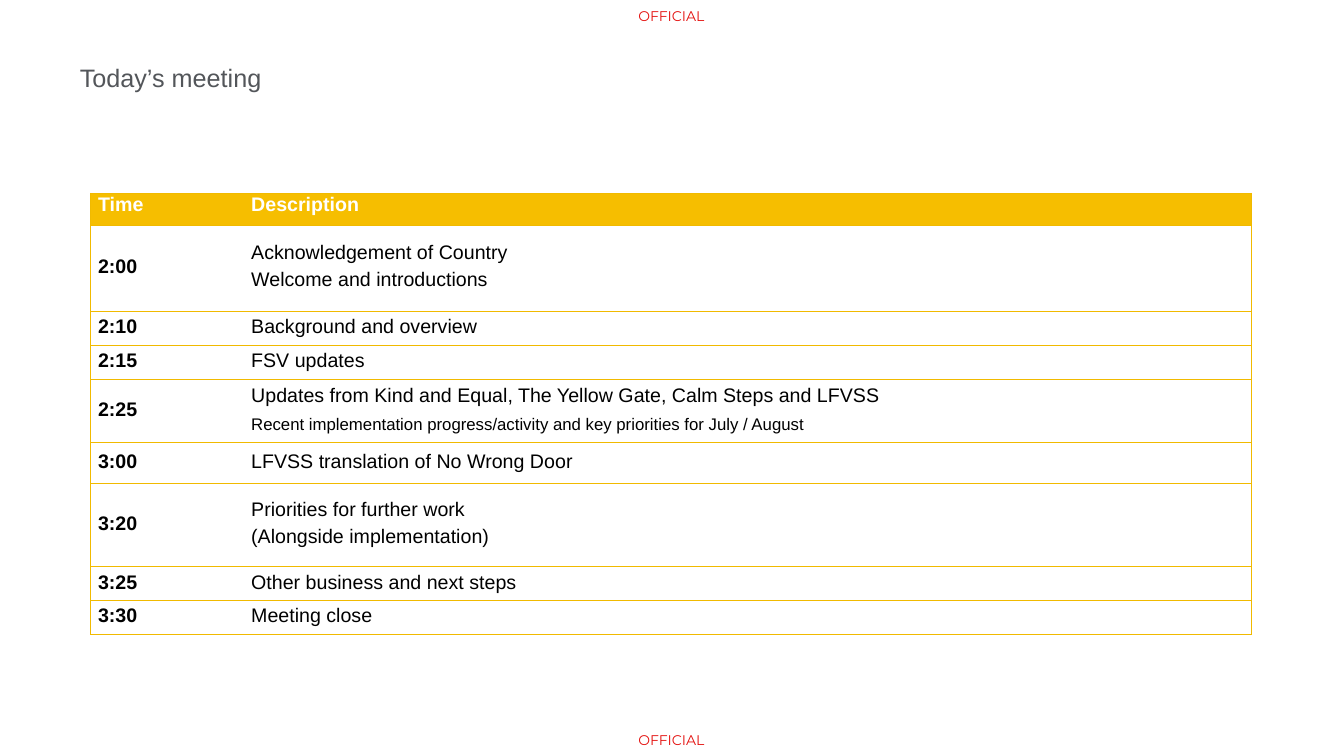
from dataclasses import dataclass

import lxml.etree
import pptx
import pptx.dml.color
import pptx.enum.text
import pptx.oxml.ns
import pptx.util

Cm = pptx.util.Cm
Pt = pptx.util.Pt
Anchor = pptx.enum.text.MSO_ANCHOR
Align = pptx.enum.text.PP_ALIGN


@dataclass(frozen=True)
class Theme:
    gold: str = "F1BA00"
    header: str = "F6BE00"
    white: str = "FFFFFF"
    black: str = "000000"
    title: str = "53565A"
    marking: str = "E4100E"
    body_font: str = "Arial"
    marking_font: str = "Montserrat"
    title_size: float = 18
    table_size: float = 14
    note_size: float = 12
    marking_size: float = 10
    border_width: float = 0.75


@dataclass(frozen=True)
class AgendaItem:
    time: str
    topic: str
    height: float
    second_line: str = ""
    second_size: float = 14


THEME = Theme()
NO_GRID_STYLE = "{2D5ABB26-0587-4C30-8999-92F81FD0307C}"
COLUMN_WIDTHS = (3.86, 25.4)
HEADER_HEIGHT = 0.8
AGENDA = (
    AgendaItem("2:00", "Acknowledgement of Country", 2.17, "Welcome and introductions"),
    AgendaItem("2:10", "Background and overview", 0.86),
    AgendaItem("2:15", "FSV updates", 0.86),
    AgendaItem("2:25", "Updates from Kind and Equal, The Yellow Gate, Calm Steps and LFVSS", 1.59,
               "Recent implementation progress/activity and key priorities for July / August",
               THEME.note_size),
    AgendaItem("3:00", "LFVSS translation of No Wrong Door", 1.03),
    AgendaItem("3:20", "Priorities for further work", 2.1, "(Alongside implementation)"),
    AgendaItem("3:25", "Other business and next steps", 0.86),
    AgendaItem("3:30", "Meeting close", 0.85),
)


def apply(target, values: dict) -> None:
    for name, value in values.items():
        setattr(target, name, value)


def write(para, text: str, size: float, color: str, font: str = THEME.body_font,
          bold: bool = False) -> None:
    span = para.add_run()
    span.text = text
    apply(span.font, {"name": font, "size": Pt(size), "bold": bold})
    span.font.color.rgb = pptx.dml.color.RGBColor.from_string(color)


def format_frame(frame) -> None:
    apply(frame, {"margin_left": 0, "margin_right": 0, "margin_top": 0, "margin_bottom": 0,
                  "word_wrap": True, "vertical_anchor": Anchor.MIDDLE,
                  "auto_size": pptx.enum.text.MSO_AUTO_SIZE.NONE})


def add_marking(page, top: float) -> None:
    box = page.shapes.add_textbox(Cm(15.62), Cm(top), Cm(2.6), Cm(0.8))
    format_frame(box.text_frame)
    para = box.text_frame.paragraphs[0]
    para.alignment = Align.CENTER
    write(para, "OFFICIAL", THEME.marking_size, THEME.marking, THEME.marking_font)


def add_title(page) -> None:
    box = page.shapes.title
    apply(box, {"left": Cm(2.01), "top": Cm(0.76), "width": Cm(29.87), "height": Cm(2.39)})
    format_frame(box.text_frame)
    para = box.text_frame.paragraphs[0]
    para.alignment = Align.LEFT
    write(para, "Today’s meeting", THEME.title_size, THEME.title)


def add_borders(cell, sides: str) -> None:
    properties = cell._tc.get_or_add_tcPr()
    qn = pptx.oxml.ns.qn
    for side in sides:
        line = lxml.etree.SubElement(properties, qn(f"a:ln{side}"),
                                     w=str(Pt(THEME.border_width)))
        fill = lxml.etree.SubElement(line, qn("a:solidFill"))
        lxml.etree.SubElement(fill, qn("a:srgbClr"), val=THEME.gold)


def format_cell(cell, column: int, fill: str, anchor) -> None:
    apply(cell, {"margin_left": Cm(0.19), "margin_right": Cm(0.19), "margin_top": 0,
                 "margin_bottom": 0, "vertical_anchor": anchor})
    add_borders(cell, ("L" if column == 0 else "R") + "TB")
    cell.fill.solid()
    cell.fill.fore_color.rgb = pptx.dml.color.RGBColor.from_string(fill)


def fill_header(table) -> None:
    for column, label in enumerate(("Time", "Description")):
        cell = table.cell(0, column)
        format_cell(cell, column, THEME.header, Anchor.TOP)
        para = cell.text_frame.paragraphs[0]
        para.space_after = Pt(3)
        write(para, label, THEME.table_size, THEME.white, bold=True)


def fill_item(table, row: int, item: AgendaItem) -> None:
    topic_lines = [(item.topic, THEME.table_size)]
    if item.second_line:
        topic_lines.append((item.second_line, item.second_size))
    for column, lines in enumerate(([(item.time, THEME.table_size)], topic_lines)):
        cell = table.cell(row, column)
        format_cell(cell, column, THEME.white, Anchor.MIDDLE)
        for index, (text, size) in enumerate(lines):
            frame = cell.text_frame
            para = frame.add_paragraph() if index else frame.paragraphs[0]
            apply(para, {"line_spacing": Pt(13.5), "space_after": Pt(6)})
            write(para, text, size, THEME.black, bold=column == 0)


def add_agenda(page) -> None:
    heights = (HEADER_HEIGHT, *(item.height for item in AGENDA))
    table = page.shapes.add_table(len(heights), len(COLUMN_WIDTHS), Cm(2.28), Cm(4.87),
                                  Cm(sum(COLUMN_WIDTHS)), Cm(sum(heights))).table
    apply(table, {"first_row": False, "horz_banding": False})
    table._tbl.tblPr.find(pptx.oxml.ns.qn("a:tableStyleId")).text = NO_GRID_STYLE
    for column, width in zip(table.columns, COLUMN_WIDTHS):
        column.width = Cm(width)
    for row, height in zip(table.rows, heights):
        row.height = Cm(height)
    fill_header(table)
    for row, item in enumerate(AGENDA, start=1):
        fill_item(table, row, item)


def main() -> None:
    deck = pptx.Presentation()
    apply(deck, {"slide_width": Cm(33.87), "slide_height": Cm(19.05)})
    page = deck.slides.add_slide(deck.slide_layouts[5])
    for top in (0, 18.25):
        add_marking(page, top)
    add_title(page)
    add_agenda(page)
    deck.save("out.pptx")


if __name__ == "__main__":
    main()
